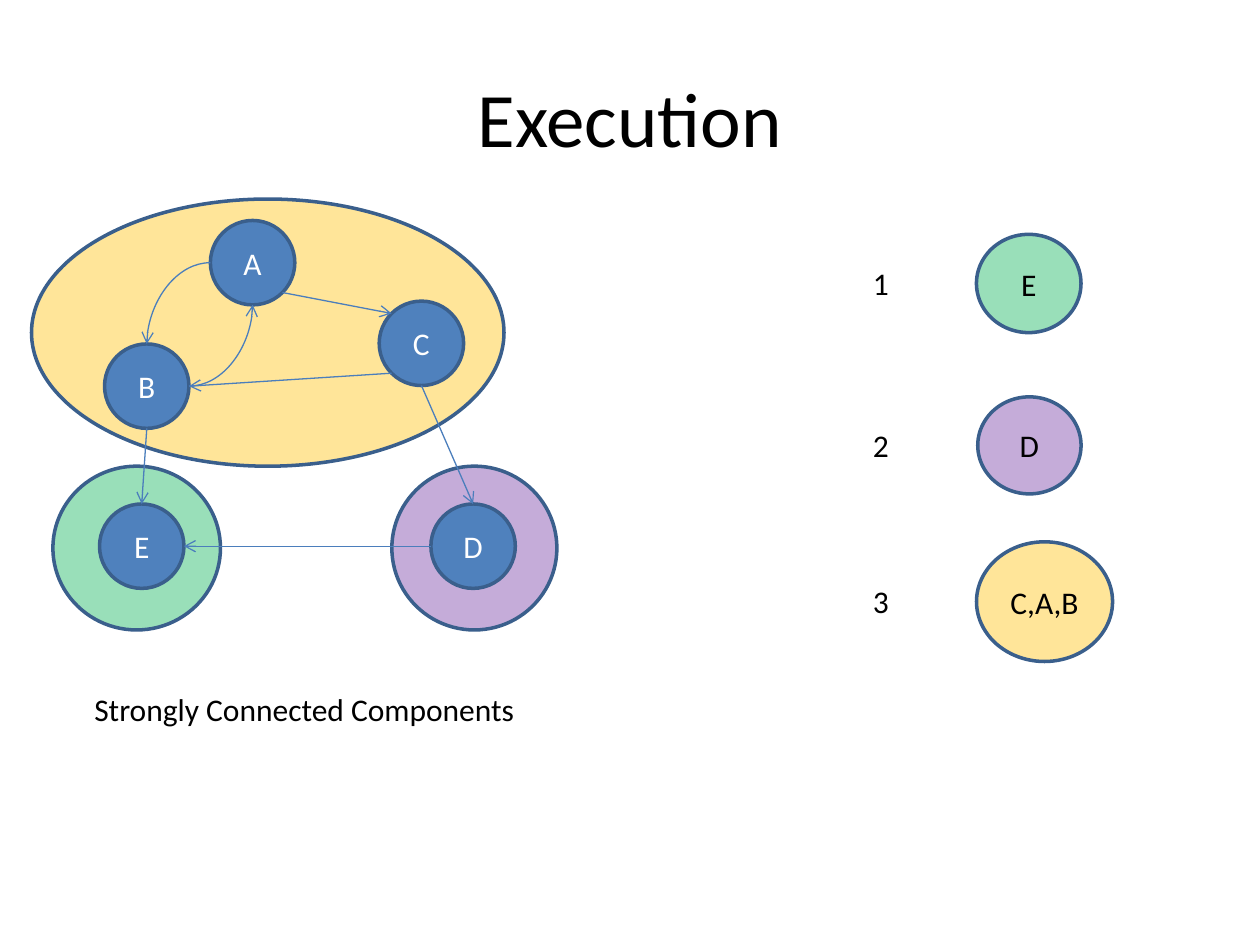
from math import cos, radians, sin

from lxml.etree import SubElement
from pptx import Presentation
from pptx.dml.color import RGBColor
from pptx.enum.shapes import MSO_CONNECTOR, MSO_SHAPE
from pptx.enum.text import MSO_ANCHOR, PP_ALIGN
from pptx.oxml.ns import qn
from pptx.util import Inches, Pt

THEME = {
    "font": "Calibri", "title": 44, "body": 18,
    "black": "000000", "white": "FFFFFF",
    "node": "4F81BD", "outline": "3A5F8C", "edge": "4B7EBC",
    "green": "00B050", "purple": "7030A0", "yellow": "FFC000",
    "tint": 40, "outline_width": 2, "edge_width": 0.75,
}

TITLE = "Execution"
CAPTION = "Strongly Connected Components"

# Colour, then left, top, width, height
COMPONENTS = [
    ("purple", (3.11, 3.7, 1.31, 1.3)),
    ("green", (0.42, 3.7, 1.33, 1.3)),
    ("yellow", (0.25, 1.58, 3.75, 2.12)),
]

NODE_SIZE = 0.67
NODES = {"A": (1.67, 1.75), "C": (3.01, 2.39), "D": (3.42, 4),
         "E": (0.79, 4), "B": (0.83, 2.73)}

# Angles on a node's rim, clockwise from the right
RIM = {"right": 0, "lower right": 45, "bottom": 90, "lower left": 135,
       "left": 180, "upper left": 225, "top": 270}

# Start node and side, end node and side, curved or not
EDGES = [
    ("A", "left", "B", "top", True),
    ("B", "right", "A", "bottom", True),
    ("A", "lower right", "C", "upper left", False),
    ("C", "bottom", "D", "top", False),
    ("D", "left", "E", "right", False),
    ("B", "bottom", "E", "top", False),
    ("C", "lower left", "B", "right", False),
]

# Members, colour, place of the oval, top of the number
STEPS = [
    ("E", "green", (7.75, 1.86, 0.83, 0.78), 2.05),
    ("D", "purple", (7.76, 3.15, 0.82, 0.77), 3.33),
    ("C,A,B", "yellow", (7.75, 4.3, 1.08, 0.95), 4.57),
]


def theme_color(name):
    return RGBColor.from_string(THEME[name])


def write(box, text, size="body", color="black", align=PP_ALIGN.LEFT):
    paragraph = box.text_frame.paragraphs[0]
    paragraph.text = text
    paragraph.alignment = align
    paragraph.font.name = THEME["font"]
    paragraph.font.size = Pt(THEME[size])
    paragraph.font.color.rgb = theme_color(color)


def add_label(page, place, text):
    box = page.shapes.add_textbox(*map(Inches, place))
    box.text_frame.word_wrap = False
    write(box, text)


def add_oval(page, place, fill, text="", color="black", tinted=True):
    oval = page.shapes.add_shape(MSO_SHAPE.OVAL, *map(Inches, place))
    oval.shadow.inherit = False
    oval.fill.solid()
    oval.fill.fore_color.rgb = theme_color(fill)
    oval.line.color.rgb = theme_color("outline")
    oval.line.width = Pt(THEME["outline_width"])
    if tinted:
        fill_color = oval._element.spPr.find(qn("a:solidFill")).find(qn("a:srgbClr"))
        SubElement(fill_color, qn("a:alpha"), val=str(THEME["tint"] * 1000))
    if text:
        oval.text_frame.vertical_anchor = MSO_ANCHOR.MIDDLE
        write(oval, text, color=color, align=PP_ALIGN.CENTER)


def rim_point(node, side):
    left, top = NODES[node]
    radius = NODE_SIZE / 2
    angle = radians(RIM[side])
    return (Inches(left + radius + radius * cos(angle)),
            Inches(top + radius + radius * sin(angle)))


def add_edge(page, start, start_side, end, end_side, curved):
    kind = MSO_CONNECTOR.CURVE if curved else MSO_CONNECTOR.STRAIGHT
    edge = page.shapes.add_connector(
        kind, *rim_point(start, start_side), *rim_point(end, end_side))
    edge.line.color.rgb = theme_color("edge")
    edge.line.width = Pt(THEME["edge_width"])
    properties = edge._element.spPr
    if curved:  # a single quarter bend
        properties.find(qn("a:prstGeom")).set("prst", "curvedConnector2")
    SubElement(properties.find(qn("a:ln")), qn("a:tailEnd"), type="arrow")
    SubElement(properties, qn("a:effectLst"))


def main():
    deck = Presentation()
    deck.slide_width, deck.slide_height = Inches(10), Inches(7.5)
    page = deck.slides.add_slide(deck.slide_layouts[6])

    for color, place in COMPONENTS:
        add_oval(page, place, color)

    title = page.shapes.add_textbox(Inches(0.5), Inches(0.3), Inches(9), Inches(1.25))
    title.text_frame.word_wrap = True
    title.text_frame.vertical_anchor = MSO_ANCHOR.MIDDLE
    write(title, TITLE, size="title", align=PP_ALIGN.CENTER)

    for name, corner in NODES.items():
        add_oval(page, (*corner, NODE_SIZE, NODE_SIZE), "node", name, "white", tinted=False)
    for edge in EDGES:
        add_edge(page, *edge)
    add_label(page, (0.65, 5.43, 3.58, 0.4), CAPTION)

    for number, (members, color, place, label_top) in enumerate(STEPS, start=1):
        add_oval(page, place, color, members)
        add_label(page, (6.83, label_top, 0.33, 0.4), str(number))

    deck.save("out.pptx")


if __name__ == "__main__":
    main()
